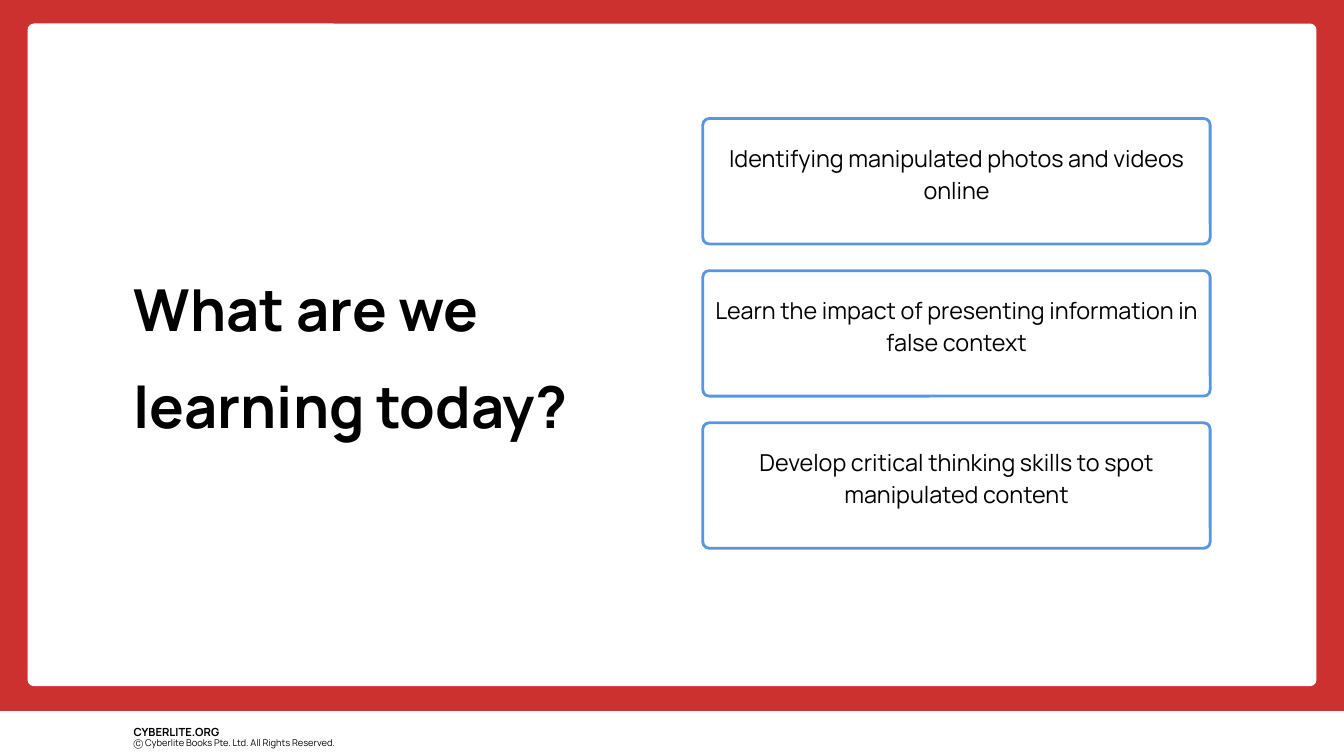
from dataclasses import dataclass

from pptx import Presentation
from pptx.dml.color import RGBColor
from pptx.enum.shapes import MSO_SHAPE
from pptx.enum.text import MSO_ANCHOR, MSO_AUTO_SIZE, PP_ALIGN
from pptx.util import Pt


@dataclass(frozen=True)
class Theme:
    font: str = "Manrope"
    red: RGBColor = RGBColor(0xCC, 0x30, 0x2F)
    white: RGBColor = RGBColor(0xFF, 0xFF, 0xFF)
    blue: RGBColor = RGBColor(0x59, 0x96, 0xE2)
    ink: RGBColor = RGBColor(0, 0, 0)
    title: int = 62
    card: int = 25
    site: int = 12
    rights: int = 10


theme = Theme()
RADIUS = 6.75


def add_block(s, left, top, width, height, radius=0):
    """Add a white rectangle, with rounded corners if a radius is given."""
    kind = MSO_SHAPE.ROUNDED_RECTANGLE if radius else MSO_SHAPE.RECTANGLE
    sp = s.shapes.add_shape(kind, Pt(left), Pt(top), Pt(width), Pt(height))
    if radius:
        sp.adjustments[0] = radius / min(width, height)
    sp.shadow.inherit = False
    sp.fill.solid()
    sp.fill.fore_color.rgb = theme.white
    sp.line.fill.background()
    return sp


def set_text(sp, text, size, bold=False, spacing=1.4, align=PP_ALIGN.LEFT,
             anchor=MSO_ANCHOR.TOP, insets=(0, 0, 0, 0)):
    """Write one paragraph; insets are left, top, right, bottom."""
    tf = sp.text_frame
    tf.word_wrap = True
    tf.auto_size = MSO_AUTO_SIZE.NONE
    tf.vertical_anchor = anchor
    tf.margin_left, tf.margin_top, tf.margin_right, tf.margin_bottom = map(Pt, insets)
    p = tf.paragraphs[0]
    p.alignment = align
    p.line_spacing = spacing
    p.space_before = Pt(0)
    r = p.add_run()
    r.text = text
    r.font.name = theme.font
    r.font.size = Pt(size)
    r.font.bold = bold
    r.font.color.rgb = theme.ink


prs = Presentation()
prs.slide_width, prs.slide_height = Pt(1440), Pt(810)
s = prs.slides.add_slide(prs.slide_layouts[5])
s.background.fill.solid()
s.background.fill.fore_color.rgb = theme.red

# Footer band
add_block(s, 0, 762, 1440, 48)
footer = [
    ("CYBERLITE.ORG", 771.8, 133, 16.5, theme.site, True),
    ("Ⓒ Cyberlite Books Pte. Ltd. All Rights Reserved.", 784.8, 333, 12.2, theme.rights, False),
]
for text, top, width, height, size, bold in footer:
    box = s.shapes.add_textbox(Pt(143.3), Pt(top), Pt(width), Pt(height))
    set_text(box, text, size, bold)

# White panel
add_block(s, 29.5, 25.2, 1381, 710, RADIUS)

# Learning goals; the deeper bottom inset lifts the text above the card's middle
goals = [
    "Identifying manipulated photos and videos online",
    "Learn the impact of presenting information in false context",
    "Develop critical thinking skills to spot manipulated content",
]
for i, goal in enumerate(goals):
    card = add_block(s, 753, 127 + 163 * i, 543.6, 134.4, RADIUS)
    card.line.color.rgb = theme.blue
    card.line.width = Pt(3)
    set_text(card, goal, theme.card, spacing=1.15, align=PP_ALIGN.CENTER,
             anchor=MSO_ANCHOR.MIDDLE, insets=(4, 4, 4, 24))

# Title, brought in front of the panel
title = s.shapes.title
title.left, title.top, title.width, title.height = Pt(143.3), Pt(263.5), Pt(520), Pt(173.5)
set_text(title, "What are we learning today?", theme.title, bold=True)
s.shapes._spTree.append(title._element)

prs.save("out.pptx")
